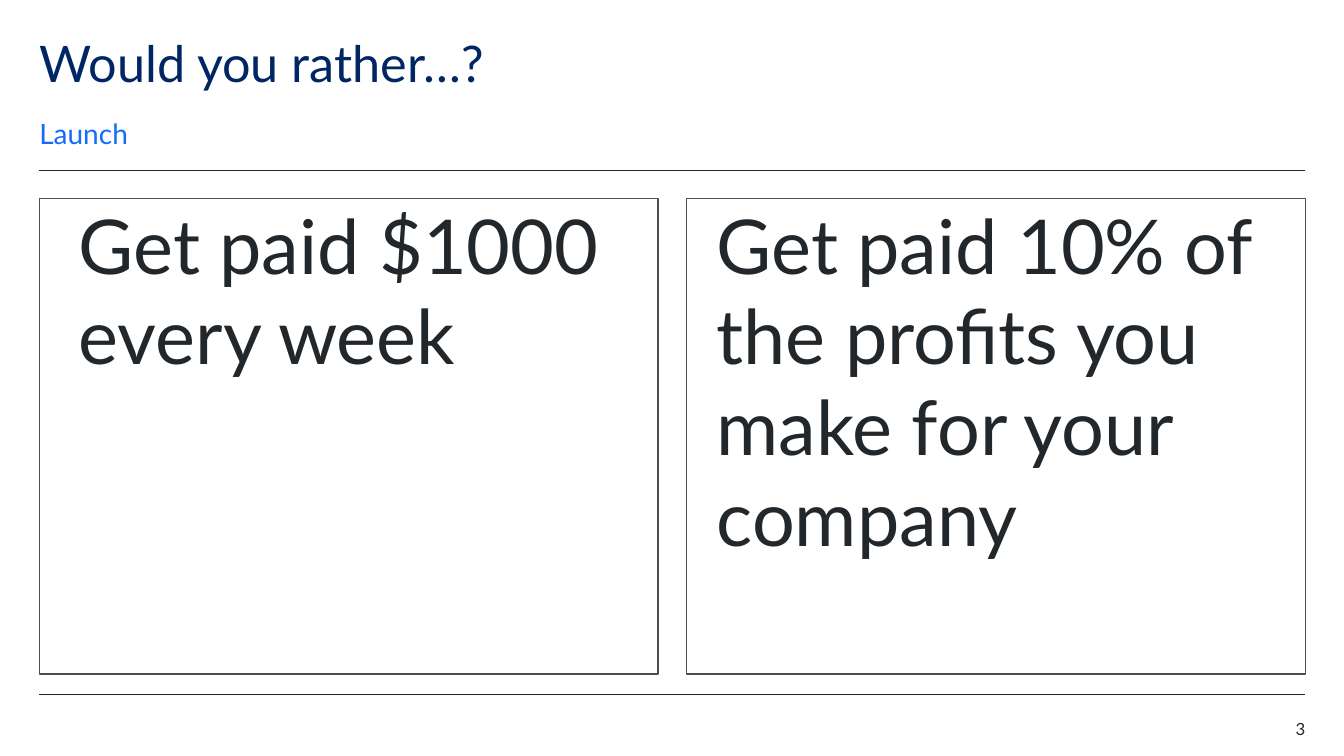
from lxml.etree import SubElement as Sub
from pptx import Presentation
from pptx.dml.color import RGBColor as Rgb
from pptx.enum.shapes import MSO_CONNECTOR as Link, MSO_SHAPE as Form
from pptx.enum.text import MSO_ANCHOR as Anchor, PP_ALIGN as Align
from pptx.oxml.ns import qn
from pptx.util import Pt

COLORS = {"navy": "002664", "blue": "146CFD", "ink": "22272B",
          "edge": "495054", "white": "FFFFFF"}
LEFT, RIGHT = 28.1, 932.4
GAP = 20.2


def color(name):
    """Return the named colour."""
    return Rgb.from_string(COLORS[name])


def write(shape, text, size, ink="ink", align=Align.LEFT, anchor=Anchor.TOP,
          inset=0, space=None, after=0):
    """Put one formatted paragraph into a shape."""
    frame = shape.text_frame
    frame.word_wrap = True
    frame.vertical_anchor = anchor
    frame.margin_left = Pt(inset)
    frame.margin_top = frame.margin_right = frame.margin_bottom = 0
    para = frame.paragraphs[0]
    para.alignment = align
    para.line_spacing = space
    para.space_after = Pt(after)
    run = para.add_run()
    run.text = text
    run.font.name = "Lato"
    run.font.size = Pt(size)
    run.font.color.rgb = color(ink)


def label(slide, box, text, size, **style):
    """Add a text box."""
    write(slide.shapes.add_textbox(*map(Pt, box)), text, size, **style)


def panel(slide, box, text, inset):
    """Add an outlined box with large text."""
    shape = slide.shapes.add_shape(Form.RECTANGLE, *map(Pt, box))
    shape.shadow.inherit = False
    shape.fill.solid()
    shape.fill.fore_color.rgb = color("white")
    shape.line.color.rgb = color("edge")
    shape.line.width = Pt(1)
    write(shape, text, 54, inset=inset, after=12)


def rule(slide, top):
    """Add a thin line across the slide."""
    line = slide.shapes.add_connector(
        Link.STRAIGHT, Pt(LEFT), Pt(top), Pt(RIGHT), Pt(top))
    line.line.color.rgb = color("ink")
    line.line.width = Pt(0.5)
    Sub(line._element.spPr, qn("a:effectLst"))


def main():
    """Build and save the slide."""
    deck = Presentation()
    deck.slide_width, deck.slide_height = Pt(960), Pt(540)
    slide = deck.slides.add_slide(deck.slide_layouts[6])
    for top in (121.7, 496.1):
        rule(slide, top)
    label(slide, (LEFT, 28.1, 793.4, 43.2), "Would you rather…?", 36,
          ink="navy", space=0.9)
    label(slide, (LEFT, 82.8, 793.4, 24.5), "Launch", 20, ink="blue",
          anchor=Anchor.BOTTOM, after=12)
    width = (RIGHT - LEFT - GAP) / 2
    choices = (("Get paid $1000 every week", 28.1),
               ("Get paid 10% of the profits you make for your company", 21.6))
    for col, (text, inset) in enumerate(choices):
        left = LEFT + col * (width + GAP)
        panel(slide, (left, 141.8, width, 339.8), text, inset)
    label(slide, (RIGHT - 56.9, 513.4, 56.9, 14.4), "3", 12, align=Align.RIGHT)
    deck.save("out.pptx")


if __name__ == "__main__":
    main()
